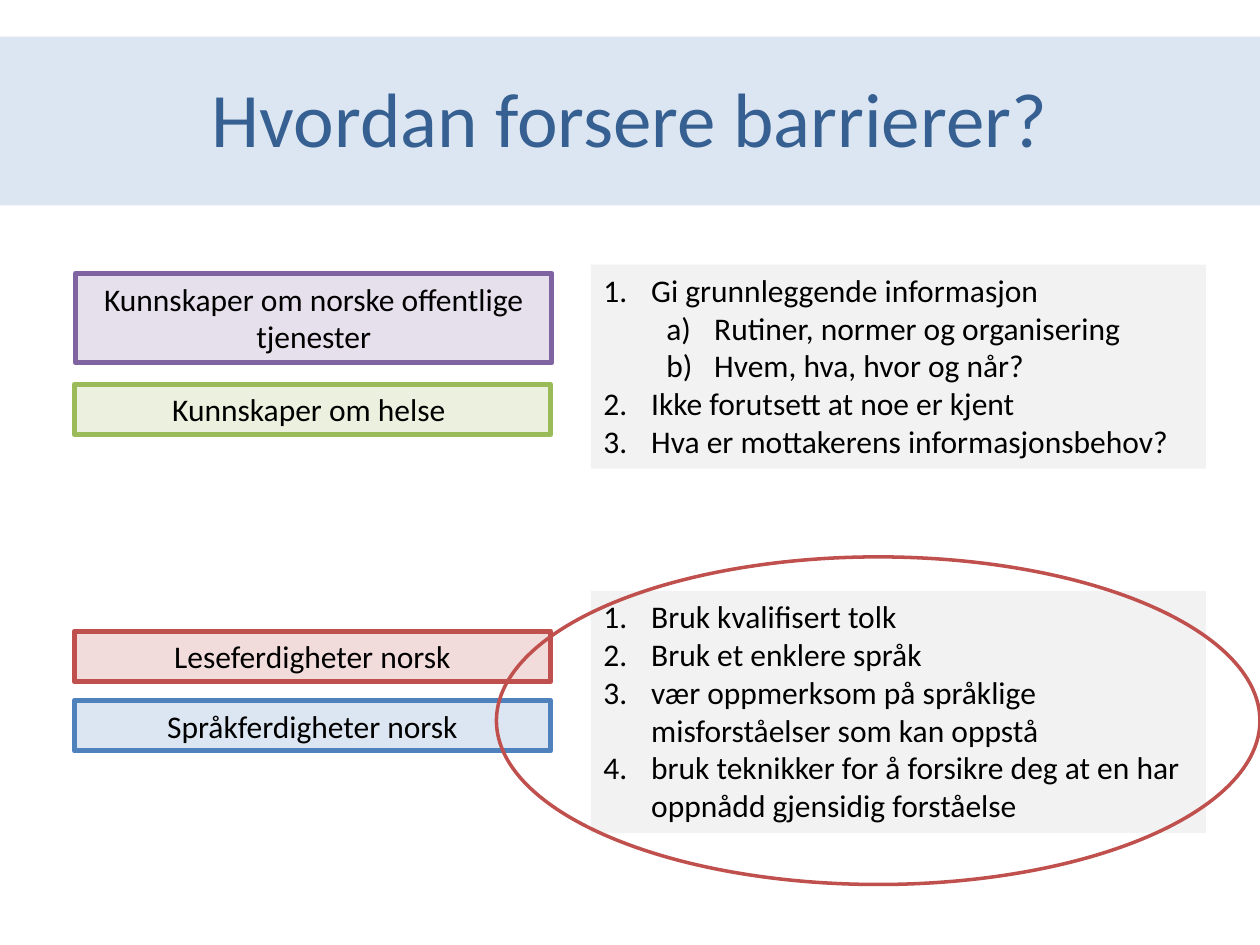
from lxml import etree
from pptx import Presentation
from pptx.dml.color import RGBColor
from pptx.enum.shapes import MSO_SHAPE as Shape
from pptx.enum.text import MSO_ANCHOR as Anchor, MSO_AUTO_SIZE as AutoSize, PP_ALIGN as Align
from pptx.oxml.ns import qn
from pptx.util import Inches, Pt

FONT = "Calibri"
COLORS = {
    "text": "000000", "title": "376092", "panel": "F2F2F2",
    "blue": "4F81BD", "light blue": "DCE6F2",
    "green": "9BBB59", "light green": "EBF1DE",
    "red": "C0504D", "light red": "F2DCDB",
    "purple": "8064A2", "light purple": "E6E0EC",
}

TITLE = "Hvordan forsere barrierer?"

# Barriers: text, hue, left, top, height
BARRIERS = [
    ("Språkferdigheter norsk", "blue", 0.59, 5.56, 0.4),
    ("Kunnskaper om helse ", "green", 0.59, 3.05, 0.4),
    ("Leseferdigheter norsk", "red", 0.59, 5.01, 0.4),
    ("Kunnskaper om norske offentlige tjenester", "purple", 0.6, 2.17, 0.71),
]
BARRIER_WIDTH = 3.78

# Advice panels: top, height, items as (level, text)
ADVICE = [
    (2.1, 1.62, [
        (0, "Gi grunnleggende informasjon"),
        (1, "Rutiner, normer og organisering"),
        (1, "Hvem, hva, hvor og når?"),
        (0, "Ikke forutsett at noe er kjent"),
        (0, "Hva er mottakerens informasjonsbehov?"),
    ]),
    (4.69, 1.92, [
        (0, "Bruk kvalifisert tolk"),
        (0, "Bruk et enklere språk"),
        (0, "vær oppmerksom på språklige misforståelser som kan oppstå"),
        (0, "bruk teknikker for å forsikre deg at en har oppnådd gjensidig forståelse"),
    ]),
]
ADVICE_LEFT, ADVICE_WIDTH = 4.69, 4.88
NUMBERING = ["arabicPeriod", "alphaLcParenR"]
HANGING, LEVEL_STEP = 0.38, 0.5


def color(name):
    return RGBColor.from_string(COLORS[name])


def add_block(slide, kind, box, fill=None, line=None, line_width=0):
    shape = slide.shapes.add_shape(kind, *map(Inches, box))
    shape.shadow.inherit = False
    if fill:
        shape.fill.solid()
        shape.fill.fore_color.rgb = color(fill)
    else:
        shape.fill.background()
    if line:
        shape.line.color.rgb = color(line)
        shape.line.width = Pt(line_width)
    else:
        shape.line.fill.background()
    return shape


def add_text(paragraph, text, align, size=18, ink="text"):
    paragraph.alignment = align
    run = paragraph.add_run()
    run.text = text
    run.font.name = FONT
    run.font.size = Pt(size)
    run.font.color.rgb = color(ink)


def number_paragraph(paragraph, level):
    paragraph.level = level
    properties = paragraph._p.get_or_add_pPr()
    properties.set("marL", str(Inches(HANGING + level * LEVEL_STEP)))
    properties.set("indent", str(-Inches(HANGING)))
    bullet_font = etree.SubElement(properties, qn("a:buFont"))
    bullet_font.set("typeface", "+mj-lt")
    bullet = etree.SubElement(properties, qn("a:buAutoNum"))
    bullet.set("type", NUMBERING[level])


def prepare_frame(shape, anchor):
    frame = shape.text_frame
    frame.word_wrap = True
    frame.vertical_anchor = anchor
    return frame


def main():
    presentation = Presentation()
    presentation.slide_width, presentation.slide_height = Inches(10), Inches(7.5)
    slide = presentation.slides.add_slide(presentation.slide_layouts[6])

    # Title band
    add_block(slide, Shape.RECTANGLE, (0, 0.29, 10, 1.34), "light blue")
    title = slide.shapes.add_textbox(*map(Inches, (0.5, 0.3, 9, 1.25)))
    frame = prepare_frame(title, Anchor.MIDDLE)
    add_text(frame.paragraphs[0], TITLE, Align.CENTER, 44, "title")

    # Barriers on the left
    for text, hue, left, top, height in BARRIERS:
        box = (left, top, BARRIER_WIDTH, height)
        shape = add_block(slide, Shape.RECTANGLE, box, f"light {hue}", hue, 3)
        frame = prepare_frame(shape, Anchor.TOP)
        frame.auto_size = AutoSize.SHAPE_TO_FIT_TEXT
        add_text(frame.paragraphs[0], text, Align.CENTER)

    # Numbered advice on the right
    for top, height, items in ADVICE:
        box = (ADVICE_LEFT, top, ADVICE_WIDTH, height)
        shape = add_block(slide, Shape.RECTANGLE, box, "panel")
        frame = prepare_frame(shape, Anchor.TOP)
        frame.auto_size = AutoSize.SHAPE_TO_FIT_TEXT
        for index, (level, text) in enumerate(items):
            paragraph = frame.add_paragraph() if index else frame.paragraphs[0]
            add_text(paragraph, text, Align.LEFT)
            number_paragraph(paragraph, level)

    # Ring around the language advice
    add_block(slide, Shape.OVAL, (3.94, 4.42, 6.06, 2.6), line="red", line_width=2)

    presentation.save("out.pptx")


if __name__ == "__main__":
    main()
